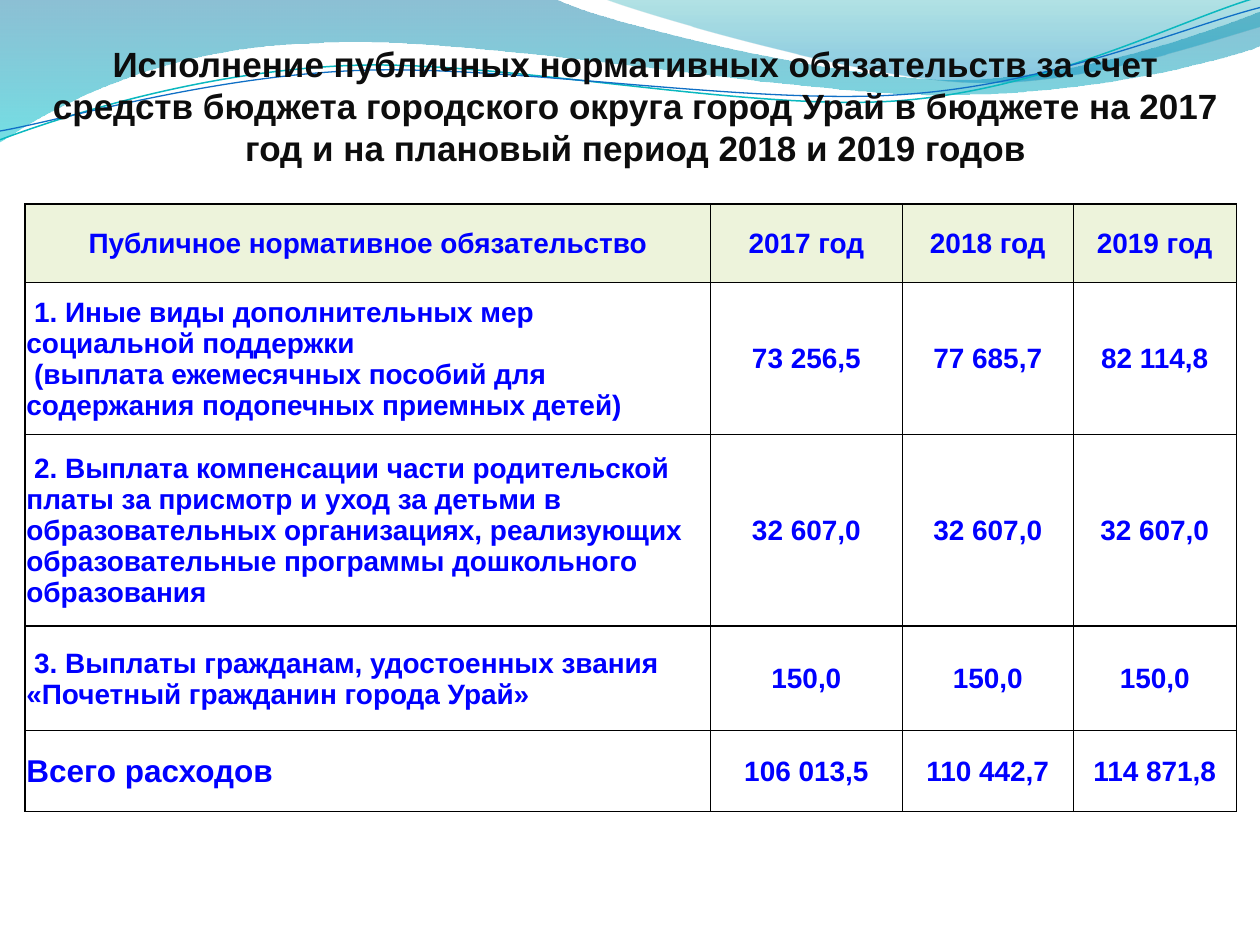
from math import cos, radians, sin

from lxml import etree
from pptx import Presentation
from pptx.dml.color import RGBColor
from pptx.enum.text import MSO_ANCHOR, PP_ALIGN
from pptx.oxml.ns import qn
from pptx.util import Inches, Pt

CENTER, LEFT = PP_ALIGN.CENTER, PP_ALIGN.LEFT
MIDDLE = MSO_ANCHOR.MIDDLE
BLANK = 6
UNITS = 10000  # freeform units per inch
WAVE_TILT = -2.7

TITLE = ("Исполнение публичных нормативных обязательств за счет средств бюджета "
         "городского округа город Урай в бюджете на 2017 год и на плановый период "
         "2018 и 2019 годов")
COLUMNS = [5.44, 1.52, 1.36, 1.29]
ROW_HEIGHTS = [0.62, 1.21, 1.52, 0.83, 0.64]
ROWS = [
    ["Публичное нормативное обязательство", "2017 год", "2018 год", "2019 год"],
    [" 1. Иные виды дополнительных мер социальной поддержки\n"
     " (выплата ежемесячных пособий для содержания подопечных приемных детей)",
     "73 256,5", "77 685,7", "82 114,8"],
    [" 2. Выплата компенсации части родительской платы за присмотр и уход за детьми "
     "в образовательных организациях, реализующих образовательные программы "
     "дошкольного образования", "32 607,0", "32 607,0", "32 607,0"],
    [" 3. Выплаты гражданам, удостоенных звания «Почетный гражданин города Урай»",
     "150,0", "150,0", "150,0"],
    ["Всего расходов", "106 013,5", "110 442,7", "114 871,8"],
]

# A segment is a list of points: one for a line, three for a Bézier curve. Inches.
# Gradient stops are (position, colour, opacity), running from top to bottom.
BANDS = [
    ([[(0, 0)], [(4.4, -0.01)], [(4.76, 0.17), (6.64, 0.63), (7.58, 0.63)],
      [(8.53, 0.63), (9.58, 0.26), (10, 0.09)], [(10.01, 0.36)],
      [(9.83, 0.44), (8.7, 0.76), (7.46, 0.75)],
      [(6.22, 0.75), (3.82, 0.28), (2.57, 0.34)],
      [(1.29, 0.36), (0.46, 0.83), (-0.01, 1.13)], [(0, 0)]],
     [(0, "0074A1", 45), (1, "00C6CF", 55)]),
    ([[(4.79, -0.01)], [(5.09, 0.11), (6.82, 0.62), (7.69, 0.65)],
      [(8.56, 0.69), (9.61, 0.32), (10, 0.21)], [(10, 0)], [(4.79, -0.01)]],
     [(0, "00A1A9", 30), (0.8, "008BBF", 45)]),
]
# Each wave: segments as they lie on the slide, centre of its tilt, colour, width.
WAVES = [
    ([[(0, 1.11)], [(0.48, 0.93), (1.58, 0.57), (2.77, 0.52)],
      [(3.95, 0.47), (5.93, 0.89), (7.13, 0.8)],
      [(8.33, 0.71), (9.38, 0.15), (9.98, -0.02)]],
     (4.99, 0.57), "0AB8BF", 0.85),
    ([[(0, 1.04)], [(0.47, 0.96), (1.64, 0.61), (2.83, 0.56)],
      [(4.03, 0.51), (5.97, 0.84), (7.17, 0.75)],
      [(8.36, 0.67), (9.41, 0.21), (10, 0.06)]],
     (5, 0.59), "0F6FC6", 0.75),
]


def rgb(color):
    return RGBColor.from_string(color)


def turn(point, center, degrees):
    a = radians(degrees)
    dx, dy = point[0] - center[0], point[1] - center[1]
    return (center[0] + dx * cos(a) - dy * sin(a),
            center[1] + dx * sin(a) + dy * cos(a))


def add_outline(slide, segments, close):
    """Draw a freeform, joining the points of each three-point segment into a curve."""
    points = [(round(x * UNITS), round(y * UNITS)) for seg in segments for x, y in seg]
    builder = slide.shapes.build_freeform(*points[0], scale=Inches(1) / UNITS)
    builder.add_line_segments(points[1:], close=close)
    sp = builder.convert_to_shape()
    sp.shadow.inherit = False
    lines = iter(list(sp._element.spPr.iter(qn("a:lnTo"))))
    for seg in segments[1:]:
        parts = [next(lines) for _ in seg]
        if len(parts) == 3:
            curve = etree.Element(qn("a:cubicBezTo"))
            parts[0].addprevious(curve)
            for part in parts:
                curve.append(part[0])
                part.getparent().remove(part)
    return sp


def add_band(slide, segments, stops):
    sp = add_outline(slide, segments, close=True)
    sp.line.fill.background()
    sp.fill.gradient()
    sp.fill.gradient_angle = 270
    for stop, (position, color, _) in zip(sp.fill.gradient_stops, stops):
        stop.position = position
        stop.color.rgb = rgb(color)
    colors = sp._element.spPr.iter(qn("a:srgbClr"))
    for clr, (_, _, opacity) in zip(list(colors), stops):
        etree.SubElement(clr, qn("a:alpha"), val=str(opacity * 1000))


def add_wave(slide, segments, center, color, width):
    level = [[turn(point, center, -WAVE_TILT) for point in seg] for seg in segments]
    sp = add_outline(slide, level, close=False)
    sp.rotation = WAVE_TILT
    sp.fill.background()
    sp.line.color.rgb = rgb(color)
    sp.line.width = Pt(width)


def write_text(tf, text, size, color, align):
    tf.text = text
    for p in tf.paragraphs:
        p.alignment = align
        for r in p.runs:
            for name, value in {"name": "Arial", "size": Pt(size), "bold": True}.items():
                setattr(r.font, name, value)
            r.font.color.rgb = rgb(color)


def add_title(slide):
    box = slide.shapes.add_textbox(Inches(0.28), Inches(0.29), Inches(9.53), Inches(1.11))
    box.text_frame.word_wrap = True
    write_text(box.text_frame, TITLE, 20, "0D0D0D", CENTER)


def set_borders(cell, widths):
    tc_pr = cell._tc.get_or_add_tcPr()
    for side, width in widths.items():
        ln = etree.SubElement(tc_pr, qn(f"a:ln{side}"), w=str(Pt(width)))
        fill = etree.SubElement(ln, qn("a:solidFill"))
        etree.SubElement(fill, qn("a:srgbClr"), val="000000")


def format_cell(cell, row, col):
    margins = {"margin_left": 0.01, "margin_top": 0.01, "margin_right": 0.01,
               "margin_bottom": 0}
    for name, value in margins.items():
        setattr(cell, name, Inches(value))
    cell.vertical_anchor = MIDDLE
    set_borders(cell, {"L": 0.5 if col else 1, "R": 0.5,
                       "T": 0.5 if row == 1 else 1, "B": 1 if row else 0.5})
    if row == 0:
        cell.fill.solid()
        cell.fill.fore_color.rgb = rgb("EDF3DB")
    else:
        cell.fill.background()


def add_budget_table(slide):
    frame = slide.shapes.add_table(len(ROWS), len(COLUMNS), Inches(0.2), Inches(1.62),
                                   Inches(sum(COLUMNS)), Inches(sum(ROW_HEIGHTS)))
    table = frame.table
    table.first_row = table.horz_banding = False
    for column, width in zip(table.columns, COLUMNS):
        column.width = Inches(width)
    for i, (height, texts) in enumerate(zip(ROW_HEIGHTS, ROWS)):
        table.rows[i].height = Inches(height)
        for j, text in enumerate(texts):
            cell = table.cell(i, j)
            is_label = i > 0 and j == 0
            is_total_label = is_label and i == len(ROWS) - 1
            write_text(cell.text_frame, text, 18 if is_total_label else 16, "0000FF",
                       LEFT if is_label else CENTER)
            format_cell(cell, i, j)


def main():
    prs = Presentation()
    prs.slide_width, prs.slide_height = Inches(10), Inches(7.5)
    slide = prs.slides.add_slide(prs.slide_layouts[BLANK])
    for band in BANDS:
        add_band(slide, *band)
    for wave in WAVES:
        add_wave(slide, *wave)
    add_title(slide)
    add_budget_table(slide)
    prs.save("out.pptx")


if __name__ == "__main__":
    main()
